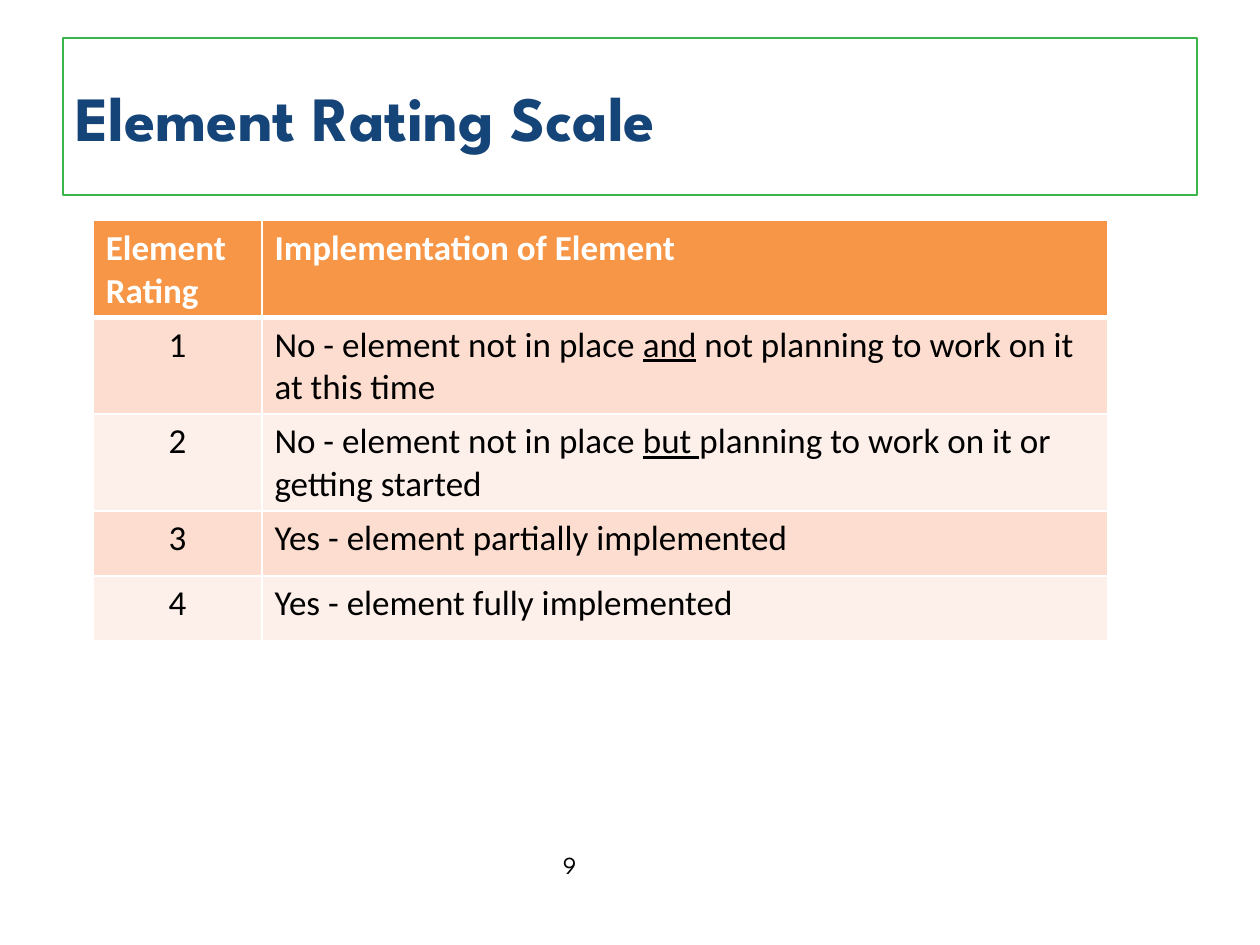
from dataclasses import dataclass

from lxml import etree
from pptx import Presentation
from pptx.dml.color import RGBColor
from pptx.enum import shapes, text
from pptx.oxml import ns
from pptx.util import Cm, Pt


@dataclass(frozen=True)
class Theme:
    head: str = "League Spartan"
    body: str = "Calibri"
    navy: str = "154578"
    green: str = "39B54A"
    orange: str = "F79646"
    bands: tuple = ("FCDDCF", "FDEFE9")
    white: str = "FFFFFF"
    black: str = "000000"
    title: int = 36
    cell: int = 20
    page: int = 14


def rgb(code):
    return RGBColor.from_string(code)


class Deck:
    def __init__(self, theme):
        self.theme = theme
        self.prs = Presentation()
        self.prs.slide_width, self.prs.slide_height = Cm(25.4), Cm(19.05)
        self.slide = self.prs.slides.add_slide(self.prs.slide_layouts[6])

    def style(self, para, face, size, color, bold=False):
        for run in para.runs:
            font = run.font
            font.name, font.size, font.bold = face, Pt(size), bold
            font.color.rgb = rgb(color)

    def title(self, words, left, top, width, height):
        t = self.theme
        box = self.slide.shapes.add_shape(
            shapes.MSO_SHAPE.RECTANGLE, Cm(left), Cm(top), Cm(width), Cm(height))
        box.shadow.inherit = False
        box.fill.background()
        box.line.color.rgb = rgb(t.green)
        box.line.width = Pt(1)
        frame = box.text_frame
        frame.text = words
        frame.vertical_anchor = text.MSO_ANCHOR.MIDDLE
        para = frame.paragraphs[0]
        para.alignment = text.PP_ALIGN.LEFT
        self.style(para, t.head, t.title, t.navy, True)

    def page(self, words, left, top, width, height):
        t = self.theme
        box = self.slide.shapes.add_textbox(
            Cm(left), Cm(top), Cm(width), Cm(height))
        frame = box.text_frame
        frame.word_wrap = True
        frame.text = words
        self.style(frame.paragraphs[0], t.head, t.page, t.black)

    def edge(self, cell, heavy):
        """Rule the cell in white, with a thick line on the heavy sides."""
        props = cell._tc.get_or_add_tcPr()
        for spot, side in enumerate("LRTB"):
            line = etree.Element(ns.qn(f"a:ln{side}"))
            line.set("w", str(Pt(3 if side in heavy else 1)))
            fill = etree.SubElement(line, ns.qn("a:solidFill"))
            etree.SubElement(fill, ns.qn("a:srgbClr"), val=self.theme.white)
            props.insert(spot, line)

    def table(self, head, rows, left, top, widths, height):
        """Each cell is a list of runs; every second run is underlined."""
        t = self.theme
        lines = [head, *rows]
        grid = self.slide.shapes.add_table(
            len(lines), len(widths), Cm(left), Cm(top),
            Cm(sum(widths)), Cm(height * len(lines))).table
        for col, width in zip(grid.columns, widths):
            col.width = Cm(width)
        for r, line in enumerate(lines):
            grid.rows[r].height = Cm(height)
            top_row = r == 0
            fill = t.orange if top_row else t.bands[(r - 1) % 2]
            for c, parts in enumerate(line):
                cell = grid.cell(r, c)
                cell.fill.solid()
                cell.fill.fore_color.rgb = rgb(fill)
                self.edge(cell, "B" if top_row else "T" if r == 1 else "")
                para = cell.text_frame.paragraphs[0]
                for n, part in enumerate(parts):
                    run = para.add_run()
                    run.text = part
                    if n % 2:
                        run.font.underline = True
                if c == 0 and not top_row:
                    para.alignment = text.PP_ALIGN.CENTER
                self.style(para, t.body, t.cell,
                           t.white if top_row else t.black, top_row)


def main():
    deck = Deck(Theme())
    deck.page("9", 11.1, 17.02, 3.81, 0.86)
    scale = [
        ["No - element not in place ", "and",
         " not planning to work on it at this time"],
        ["No - element not in place ", "but ",
         "planning to work on it or getting started"],
        ["Yes - element partially implemented"],
        ["Yes - element fully implemented"],
    ]
    rows = [([str(n)], parts) for n, parts in enumerate(scale, 1)]
    deck.table((["Element Rating"], ["Implementation of Element"]), rows,
               1.88, 4.45, (3.4, 17.05), 1.31)
    deck.title("Element Rating Scale", 1.27, 0.76, 22.86, 3.18)
    deck.prs.save("out.pptx")


if __name__ == "__main__":
    main()
